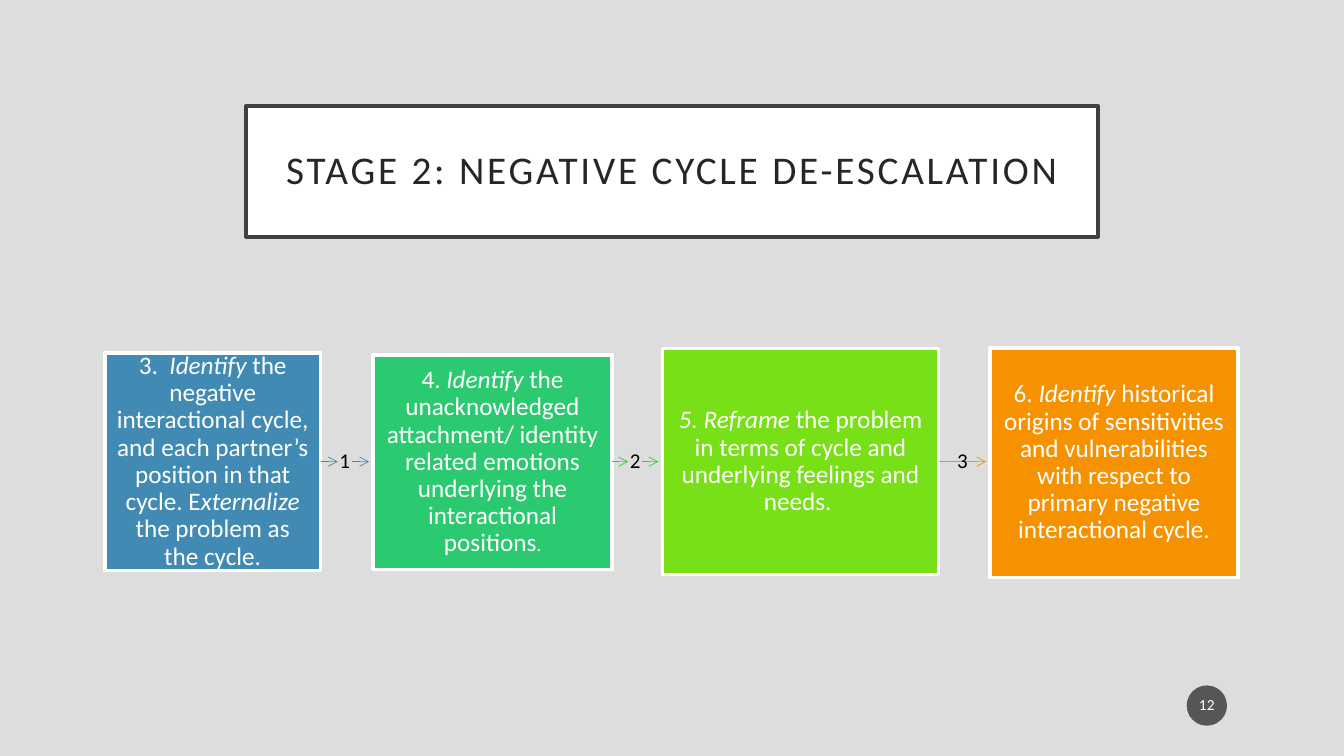
from dataclasses import dataclass

from lxml.etree import SubElement
from pptx import Presentation
from pptx.dml.color import RGBColor
from pptx.enum.shapes import MSO_CONNECTOR, MSO_SHAPE
from pptx.enum.text import MSO_ANCHOR, MSO_AUTO_SIZE, PP_ALIGN
from pptx.oxml.ns import qn
from pptx.util import Inches, Pt


@dataclass(frozen=True)
class Theme:
    font: str = "Calibri"
    background: str = "DDDDDD"
    white: str = "FFFFFF"
    black: str = "000000"
    frame: str = "404040"
    heading: str = "262626"
    badge: str = "1D1D1D"
    title_size: int = 28
    step_size: int = 18
    stop_size: int = 13
    number_size: int = 15
    badge_size: int = 11
    border: float = 2.5
    arrow: float = 0.5


THEME = Theme()
MIDLINE = 4.58
NUMBER_WIDTH = 0.14

STEPS = [
    ((1.04, 3.5, 2.14, 2.16), "418AB3", [
        ("3.  ", False), ("Identify", True),
        (" the negative interactional cycle, and each partner’s position in that cycle. E", False),
        ("xternalize", True), (" the problem as the cycle.", False)]),
    ((3.7, 3.52, 2.37, 2.13), "2BC970", [
        ("4. ", False), ("Identify", True),
        (" the unacknowledged attachment/ identity related emotions underlying the"
         " interactional positions", False), (".", False)]),
    ((6.57, 3.46, 2.74, 2.24), "78E016", [
        ("5. Reframe", True),
        (" the problem in terms of cycle and underlying feelings and needs. ", False)]),
    ((9.82, 3.45, 2.46, 2.28), "F69200", [
        ("6. ", False), ("Identify", True),
        (" historical origins of sensitivities and vulnerabilities with respect to primary"
         " negative interactional cycle.", False)]),
]
ARROW_COLOURS = ["418AB3", "25D421", "F69200"]


def colour(code):
    return RGBColor.from_string(code)


def paint(shape, fill, line=None):
    shape.fill.solid()
    shape.fill.fore_color.rgb = colour(fill)
    if line:
        shape.line.color.rgb = colour(line)
        shape.line.width = Pt(THEME.border)
    else:
        shape.line.fill.background()


def prepare_text(shape, side, top):
    frame = shape.text_frame
    frame.word_wrap = True
    frame.auto_size = MSO_AUTO_SIZE.NONE
    frame.vertical_anchor = MSO_ANCHOR.MIDDLE
    frame.margin_left = frame.margin_right = Inches(side)
    frame.margin_top = frame.margin_bottom = Inches(top)
    para = frame.paragraphs[0]
    para.alignment = PP_ALIGN.CENTER
    para.line_spacing = 0.9
    return para


def format_span(span, size, code, italic=False):
    span.font.name = THEME.font
    span.font.size = Pt(size)
    span.font.italic = italic
    span.font.color.rgb = colour(code)


def write(shape, text, size, code, side, top):
    para = prepare_text(shape, side, top)
    para.text = text
    format_span(para.runs[0], size, code)
    return para.runs[0]


def add_title(page, box, text):
    title = page.shapes.title
    title.left, title.top, title.width, title.height = map(Inches, box)
    paint(title, THEME.white, THEME.frame)
    span = write(title, text, THEME.title_size, THEME.heading, 0.2, 0.2)
    span._r.get_or_add_rPr().set("spc", "200")


def add_badge(page, box, text):
    badge = page.shapes.add_shape(MSO_SHAPE.OVAL, *map(Inches, box))
    badge.shadow.inherit = False
    paint(badge, THEME.badge)
    tint = badge._element.spPr.find(qn("a:solidFill"))[0]
    SubElement(tint, qn("a:alpha")).set("val", "70000")
    write(badge, text, THEME.badge_size, THEME.white, 0.02, 0.05)


def add_step(page, box, fill, parts):
    step = page.shapes.add_shape(MSO_SHAPE.RECTANGLE, *map(Inches, box))
    step.shadow.inherit = False
    paint(step, fill, THEME.white)
    para = prepare_text(step, 0.11, 0.11)
    for text, italic in parts:
        span = para.add_run()
        span.text = text
        size = THEME.stop_size if text == "." else THEME.step_size
        format_span(span, size, THEME.white, italic)


def add_arrow(page, start, end, code):
    arrow = page.shapes.add_connector(
        MSO_CONNECTOR.STRAIGHT, Inches(start), Inches(MIDLINE), Inches(end), Inches(MIDLINE))
    arrow.line.color.rgb = colour(code)
    arrow.line.width = Pt(THEME.arrow)
    SubElement(arrow.line._get_or_add_ln(), qn("a:tailEnd")).set("type", "arrow")
    SubElement(arrow._element.spPr, qn("a:effectLst"))


def add_link(page, start, end, number, code, split):
    left = (start + end - NUMBER_WIDTH) / 2
    if split:
        add_arrow(page, start, left, code)
        add_arrow(page, left + NUMBER_WIDTH, end, code)
    else:
        add_arrow(page, start, end, code)
    label = page.shapes.add_textbox(
        Inches(left), Inches(MIDLINE - 0.11), Inches(NUMBER_WIDTH), Inches(0.22))
    write(label, str(number), THEME.number_size, THEME.black, 0.01, 0)


def add_process(page):
    for box, fill, parts in STEPS:
        add_step(page, box, fill, parts)
    for index, code in enumerate(ARROW_COLOURS):
        left, _, width, _ = STEPS[index][0]
        next_left = STEPS[index + 1][0][0]
        split = index < len(ARROW_COLOURS) - 1
        add_link(page, left + width, next_left - 0.04, index + 1, code, split)


def main():
    deck = Presentation()
    deck.slide_width, deck.slide_height = Inches(13.33), Inches(7.5)
    page = deck.slides.add_slide(deck.slide_layouts[5])
    page.background.fill.solid()
    page.background.fill.fore_color.rgb = colour(THEME.background)
    add_title(page, (2.44, 1.05, 8.45, 1.3), "STAGE 2: NEGATIVE CYCLE DE-ESCALATION")
    add_badge(page, (11.77, 6.8, 0.4, 0.4), "12")
    add_process(page)
    deck.save("out.pptx")


if __name__ == "__main__":
    main()
